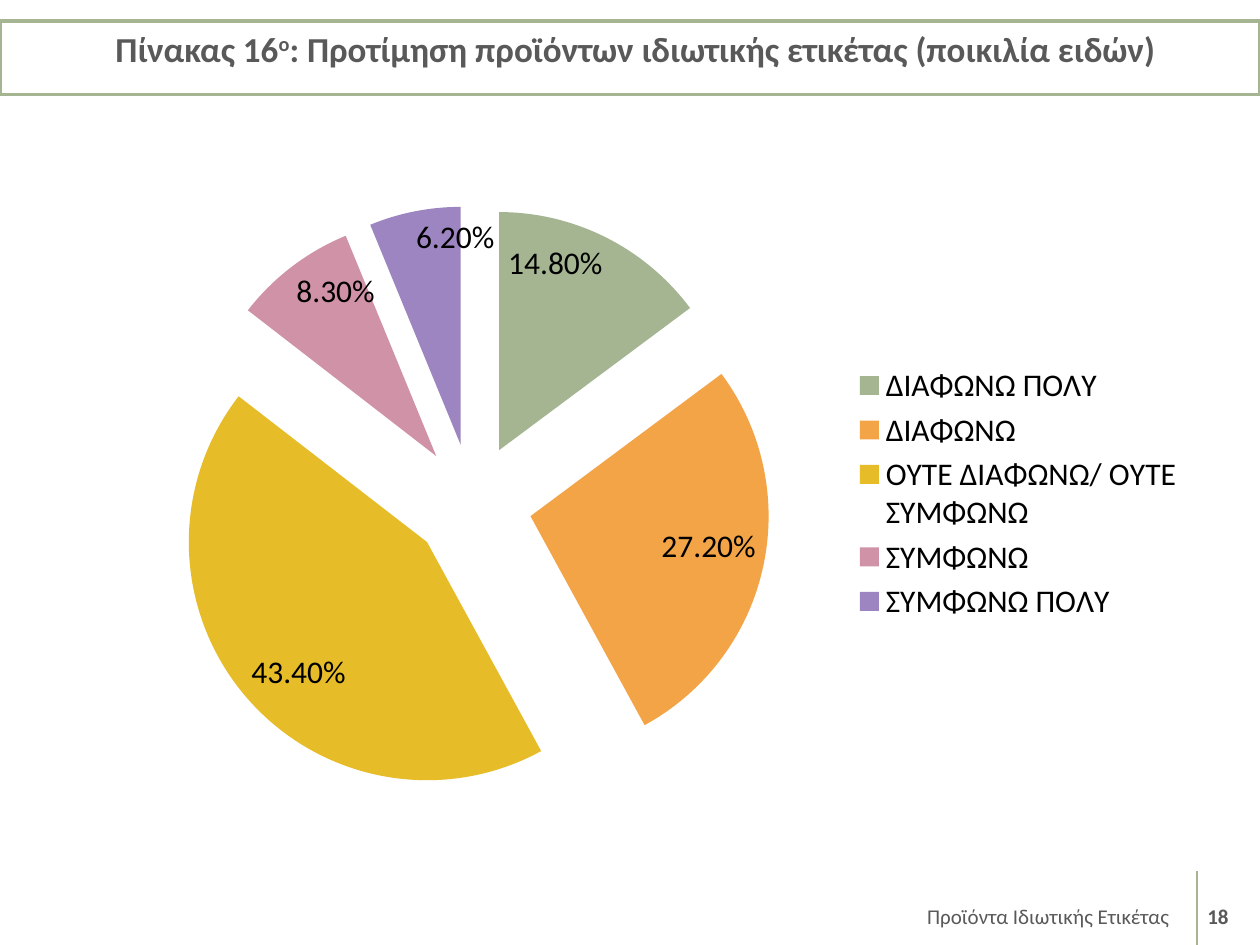
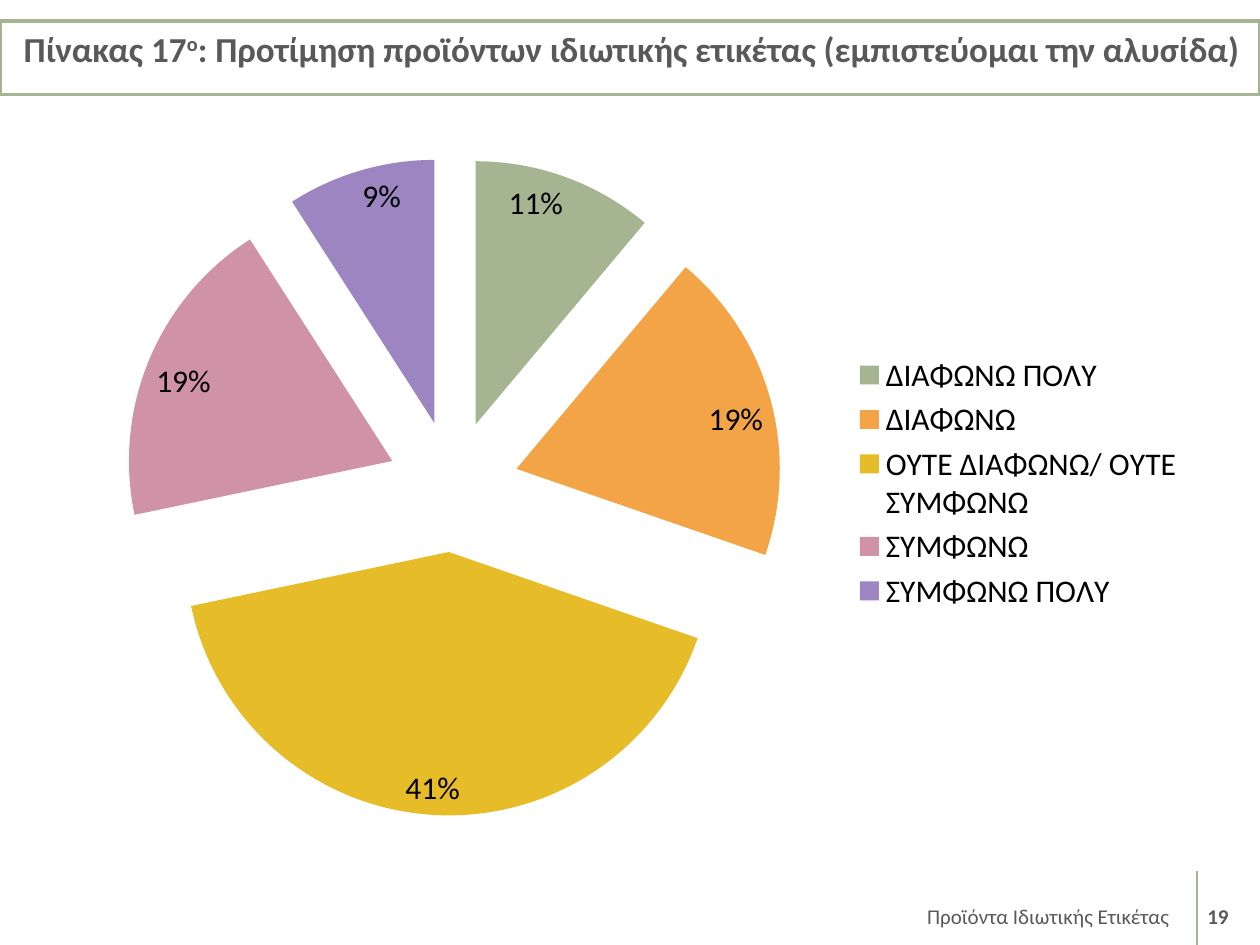
import dataclasses
import typing

import lxml.etree
import pptx
import pptx.chart.data
import pptx.dml.color
import pptx.enum.chart
import pptx.enum.shapes
import pptx.enum.text
import pptx.oxml.ns
import pptx.util

COLUMNS, ROWS = 120, 90
CELL = pptx.util.Inches(10) // COLUMNS
ALIGN = pptx.enum.text.PP_ALIGN
ANCHOR = pptx.enum.text.MSO_ANCHOR


@dataclasses.dataclass(frozen=True)
class Theme:
    font: str = "Calibri"
    background: str = "FFFFFF"
    accent: str = "A5B592"
    muted: str = "595959"
    chart_text: str = "000000"
    slices: tuple[str, ...] = ("A5B592", "F3A447", "E7BC29", "D092A7", "9C85C0")
    title_size: int = 20
    chart_size: int = 18
    footer_size: int = 12
    title_border: float = 2
    divider: float = 0.75
    explosion: int = 25


class GridBox(typing.NamedTuple):
    column: int
    row: int
    columns: int
    rows: int

    def lengths(self) -> tuple[int, ...]:
        return tuple(value * CELL for value in self)


class PlotShare(typing.NamedTuple):
    x: float
    y: float
    w: float
    h: float


@dataclasses.dataclass(frozen=True)
class FooterText:
    text: str
    box: GridBox
    alignment: typing.Any
    bold: bool


@dataclasses.dataclass(frozen=True)
class PieSlide:
    table_number: int
    topic: str
    title_alignment: typing.Any
    page: int
    chart_box: GridBox
    plot: PlotShare
    values: tuple[float, ...]
    number_format: str


THEME = Theme()
TITLE_BOX = GridBox(0, 2, COLUMNS, 7)
FOOTER_BOX = GridBox(75, 83, 38, 6)
PAGE_BOX = GridBox(113, 83, 6, 6)
DIVIDER_BOX = GridBox(114, 83, 0, 7)
FOOTER = "Προϊόντα Ιδιωτικής Ετικέτας "
ANSWERS = (
    "ΔΙΑΦΩΝΩ ΠΟΛΎ",
    "ΔΙΑΦΩΝΩ",
    "ΟΥΤΕ ΔΙΑΦΩΝΩ/ ΟΥΤΕ ΣΥΜΦΩΝΩ",
    "ΣΥΜΦΩΝΩ",
    "ΣΥΜΦΩΝΩ ΠΟΛΎ",
)
PIE_SLIDES = (
    PieSlide(
        16, "ποικιλία ειδών", ALIGN.CENTER, 18,
        GridBox(7, 15, 107, 64), PlotShare(0.09, 0.07, 0.53, 0.89),
        (0.148, 0.272, 0.434, 0.083, 0.062), "0.00%",
    ),
    PieSlide(
        17, "εμπιστεύομαι την αλυσίδα", ALIGN.LEFT, 19,
        GridBox(5, 13, 109, 66), PlotShare(0.06, 0.03, 0.58, 0.95),
        (0.11, 0.19, 0.41, 0.19, 0.09), "0%",
    ),
)


def color(value: str) -> pptx.dml.color.RGBColor:
    return pptx.dml.color.RGBColor.from_string(value)


def apply_format(target: typing.Any, values: dict[str, typing.Any]) -> None:
    for name, value in values.items():
        setattr(target, name, value)


def format_font(font: typing.Any, size: int, value: str, bold: bool = False) -> None:
    apply_format(font, {"name": THEME.font, "size": pptx.util.Pt(size), "bold": bold})
    font.color.rgb = color(value)


def fill_solid(fill: typing.Any, value: str) -> None:
    fill.solid()
    fill.fore_color.rgb = color(value)


def format_line(line: typing.Any, width: float) -> None:
    line.color.rgb = color(THEME.accent)
    line.width = pptx.util.Pt(width)


def chart_element(tag: str, value: typing.Any = None) -> typing.Any:
    element = pptx.oxml.xmlchemy.OxmlElement(f"c:{tag}")
    if value is not None:
        element.set("val", str(value))
    return element


def draw_title(slide: typing.Any, content: PieSlide) -> None:
    shape = slide.shapes.add_shape(
        pptx.enum.shapes.MSO_SHAPE.RECTANGLE, *TITLE_BOX.lengths()
    )
    shape.shadow.inherit = False
    fill_solid(shape.fill, THEME.background)
    format_line(shape.line, THEME.title_border)
    apply_format(shape.text_frame, {"word_wrap": True, "vertical_anchor": ANCHOR.TOP})
    paragraph = shape.text_frame.paragraphs[0]
    apply_format(paragraph, {
        "alignment": content.title_alignment,
        "space_before": pptx.util.Pt(6),
    })
    properties = paragraph._p.get_or_add_pPr()
    for name, inches in {"marL": 0.4, "indent": -0.31}.items():
        properties.set(name, str(pptx.util.Inches(inches)))
    parts = (
        (f"Πίνακας {content.table_number}", 0),
        ("ο", 30000),
        (f": Προτίμηση προϊόντων ιδιωτικής ετικέτας ({content.topic})", 0),
    )
    for text, baseline in parts:
        run = paragraph.add_run()
        run.text = text
        format_font(run.font, THEME.title_size, THEME.muted, True)
        run._r.get_or_add_rPr().set("baseline", str(baseline))


def draw_footer(slide: typing.Any, page: int) -> None:
    for item in (
        FooterText(FOOTER, FOOTER_BOX, ALIGN.RIGHT, False),
        FooterText(str(page), PAGE_BOX, ALIGN.CENTER, True),
    ):
        frame = slide.shapes.add_textbox(*item.box.lengths()).text_frame
        apply_format(frame, {"word_wrap": True, "vertical_anchor": ANCHOR.BOTTOM})
        paragraph = frame.paragraphs[0]
        apply_format(paragraph, {"text": item.text, "alignment": item.alignment})
        format_font(paragraph.runs[0].font, THEME.footer_size, THEME.muted, item.bold)
    left, top, width, height = DIVIDER_BOX.lengths()
    divider = slide.shapes.add_connector(
        pptx.enum.shapes.MSO_CONNECTOR.STRAIGHT, left, top, left + width, top + height
    )
    format_line(divider.line, THEME.divider)
    lxml.etree.SubElement(divider.element.spPr, pptx.oxml.ns.qn("a:effectLst"))


def place_plot(chart: typing.Any, plot: PlotShare) -> None:
    area = chart.element.chart.plotArea
    for previous in area.findall(pptx.oxml.ns.qn("c:layout")):
        area.remove(previous)
    layout, manual = chart_element("layout"), chart_element("manualLayout")
    settings = {"layoutTarget": "inner", "xMode": "edge", "yMode": "edge"}
    for tag, value in {**settings, **plot._asdict()}.items():
        manual.append(chart_element(tag, value))
    layout.append(manual)
    area.insert(0, layout)


def draw_pie(slide: typing.Any, content: PieSlide) -> None:
    data = pptx.chart.data.CategoryChartData(number_format=content.number_format)
    data.categories = ANSWERS
    data.add_series("Series 1", content.values)
    chart = slide.shapes.add_chart(
        pptx.enum.chart.XL_CHART_TYPE.PIE, *content.chart_box.lengths(), data
    ).chart
    apply_format(chart, {"has_title": False, "has_legend": True})
    format_font(chart.font, THEME.chart_size, THEME.chart_text)
    apply_format(chart.legend, {
        "position": pptx.enum.chart.XL_LEGEND_POSITION.RIGHT,
        "include_in_layout": False,
    })
    place_plot(chart, content.plot)
    plot = chart.plots[0]
    plot.vary_by_categories = True
    series = plot.series[0]
    series_name = series._element.find(pptx.oxml.ns.qn("c:tx"))
    series_name.addnext(chart_element("explosion", THEME.explosion))
    for index, value in enumerate(THEME.slices):
        fill_solid(series.points[index].format.fill, value)
    labels = series.data_labels
    apply_format(labels, {
        "show_value": True,
        "show_percentage": False,
        "number_format": content.number_format,
        "number_format_is_linked": False,
        "position": pptx.enum.chart.XL_LABEL_POSITION.INSIDE_END,
    })
    format_font(labels.font, THEME.chart_size, THEME.chart_text)


def main() -> None:
    presentation = pptx.Presentation()
    apply_format(presentation, {
        "slide_width": COLUMNS * CELL,
        "slide_height": ROWS * CELL,
    })
    for content in PIE_SLIDES:
        slide = presentation.slides.add_slide(presentation.slide_layouts[6])
        fill_solid(slide.background.fill, THEME.background)
        draw_footer(slide, content.page)
        draw_title(slide, content)
        draw_pie(slide, content)
    presentation.save("out.pptx")


if __name__ == "__main__":
    main()
